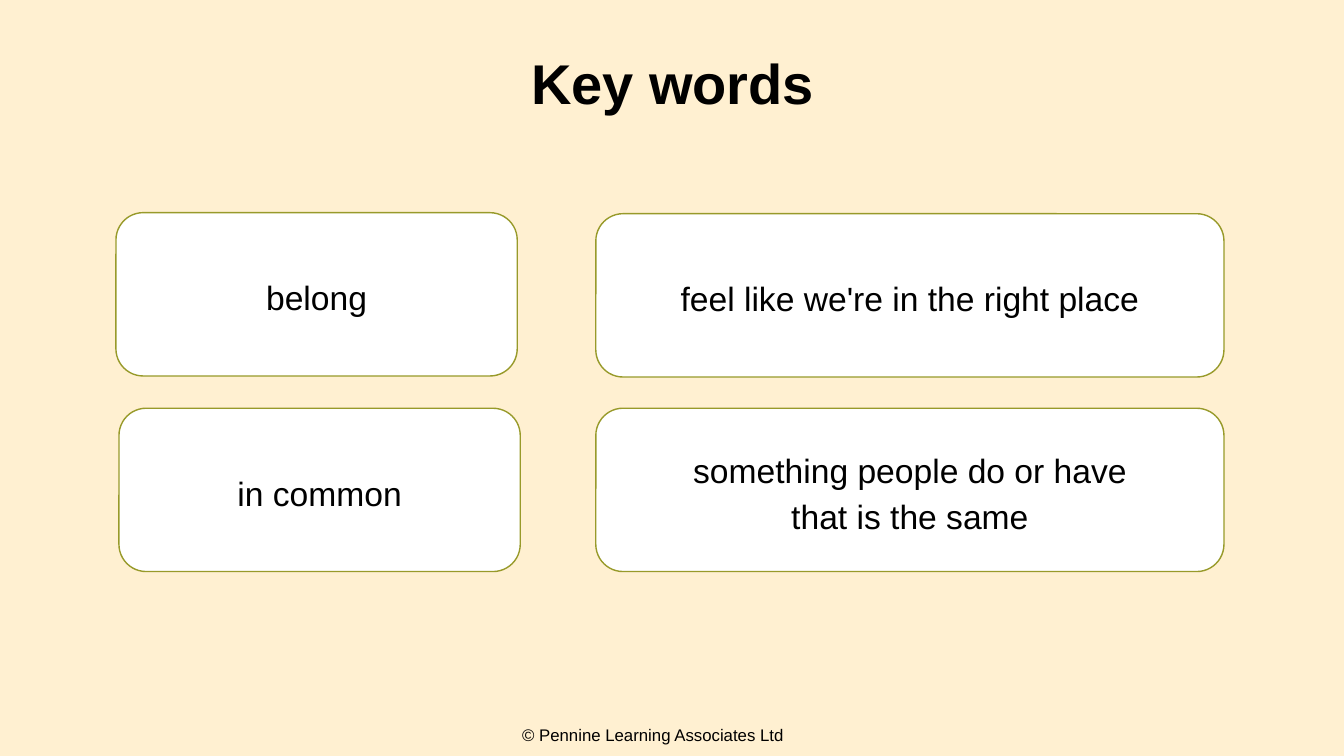
from pptx import Presentation
from pptx.dml.color import RGBColor
from pptx.enum.shapes import MSO_SHAPE
from pptx.enum.text import MSO_ANCHOR, PP_ALIGN
from pptx.util import Inches, Pt

ROUNDED = MSO_SHAPE.ROUNDED_RECTANGLE
MIDDLE = MSO_ANCHOR.MIDDLE
CENTER = PP_ALIGN.CENTER
LEFT = PP_ALIGN.LEFT

TITLE_ONLY_LAYOUT = 5
FONT = "Arial"
BLACK = "000000"
WHITE = "FFFFFF"
CREAM = "FFF0D1"
OLIVE = "989A2A"

CARD_HEIGHT = 1.62
WORD_WIDTH = 3.98
MEANING_LEFT = 5.91
MEANING_WIDTH = 6.23
KEY_WORDS = [
    ("belong", 1.15, 2.11, "feel like we're in the right place", 2.12),
    ("in common", 1.18, 4.05, "something people do or have\nthat is the same", 4.05),
]


def color(hex_string):
    return RGBColor.from_string(hex_string)


def write_text(text_frame, text, size, alignment, line_spacing=1.0, bold=False):
    text_frame.text = text
    for paragraph in text_frame.paragraphs:
        paragraph.alignment = alignment
        paragraph.line_spacing = line_spacing
        for run in paragraph.runs:
            run.font.name = FONT
            run.font.size = Pt(size)
            run.font.bold = bold
            run.font.color.rgb = color(BLACK)


def add_title(slide, text, left, top, width, height):
    title = slide.shapes.title
    title.left, title.top = Inches(left), Inches(top)
    title.width, title.height = Inches(width), Inches(height)
    title.text_frame.vertical_anchor = MIDDLE
    write_text(title.text_frame, text, 40, CENTER, 0.9, True)


def add_card(slide, text, left, top, width, height):
    card = slide.shapes.add_shape(
        ROUNDED, Inches(left), Inches(top), Inches(width), Inches(height)
    )
    card.shadow.inherit = False
    card.fill.solid()
    card.fill.fore_color.rgb = color(WHITE)
    card.line.color.rgb = color(OLIVE)
    card.line.width = Pt(1)
    card.text_frame.word_wrap = True
    card.text_frame.vertical_anchor = MIDDLE
    write_text(card.text_frame, text, 24, CENTER, 1.14)


def add_key_words(slide):
    for word, word_left, word_top, meaning, meaning_top in KEY_WORDS:
        add_card(slide, word, word_left, word_top, WORD_WIDTH, CARD_HEIGHT)
        add_card(slide, meaning, MEANING_LEFT, meaning_top, MEANING_WIDTH, CARD_HEIGHT)


def add_copyright(slide, text, left, top, width, height):
    text_box = slide.shapes.add_textbox(
        Inches(left), Inches(top), Inches(width), Inches(height)
    )
    text_box.text_frame.word_wrap = True
    write_text(text_box.text_frame, text, 12, LEFT)


def main():
    presentation = Presentation()
    presentation.slide_width = Inches(13.33)
    presentation.slide_height = Inches(7.5)
    slide = presentation.slides.add_slide(presentation.slide_layouts[TITLE_ONLY_LAYOUT])
    slide.background.fill.solid()
    slide.background.fill.fore_color.rgb = color(CREAM)
    add_title(slide, "Key words", 0.92, 0.4, 11.5, 0.92)
    add_key_words(slide)
    add_copyright(slide, "© Pennine Learning Associates Ltd", 5.08, 7.14, 3.18, 0.3)
    presentation.save("out.pptx")


if __name__ == "__main__":
    main()
